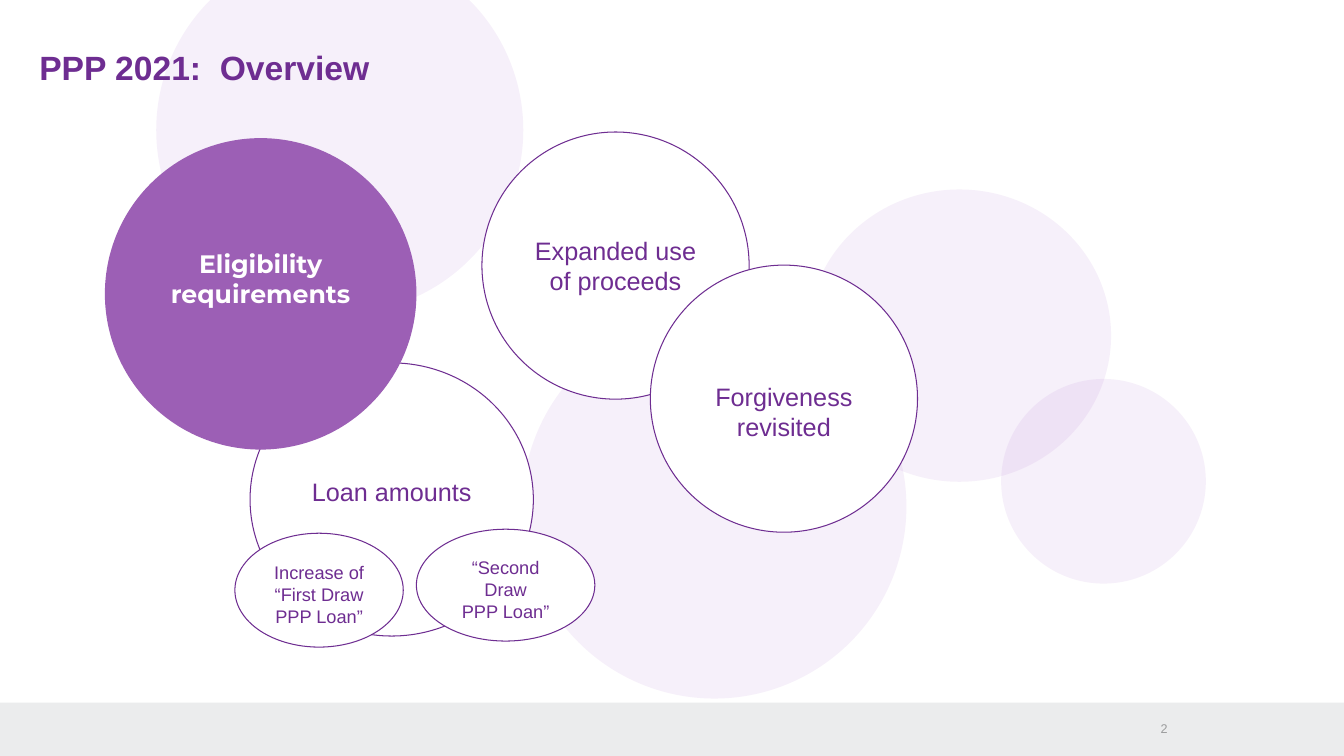
from dataclasses import dataclass

from lxml import etree
from pptx import Presentation
from pptx import util as u
from pptx.dml.color import RGBColor
from pptx.enum import shapes, text
from pptx.oxml import ns


@dataclass(frozen=True)
class Theme:
    """Colours, fonts and type sizes of the slide."""
    purple: str = "6E2D91"
    accent: str = "9C5FB5"
    bubble: str = "AE6CD2"
    white: str = "FFFFFF"
    band: str = "EBECED"
    grey: str = "9A9B9C"
    font: str = "Arial"
    accent_font: str = "Montserrat"
    title_size: float = 24
    label_size: float = 18
    small_size: float = 13
    number_size: float = 9


T = Theme()


def add_filled(s, kind, box, fill, line=None, alpha=None):
    """Add a flat preset shape, optionally outlined or see-through."""
    sp = s.shapes.add_shape(kind, *map(u.Inches, box))
    sp.shadow.inherit = False
    sp.fill.solid()
    sp.fill.fore_color.rgb = RGBColor.from_string(fill)
    if alpha is not None:
        color = sp.fill._xPr.find(".//" + ns.qn("a:srgbClr"))
        etree.SubElement(color, ns.qn("a:alpha"), val=str(alpha * 1000))
    if line:
        sp.line.color.rgb = RGBColor.from_string(line)
        sp.line.width = u.Pt(0.75)
    else:
        sp.line.fill.background()
    return sp


def write(p, words, size, color, bold=False, font=T.font):
    """Add one styled run to a paragraph."""
    r = p.add_run()
    r.text = words
    r.font.name = font
    r.font.size = u.Pt(size)
    r.font.bold = bold
    r.font.color.rgb = RGBColor.from_string(color)


def add_line(s, box, words, size, color, bold=False, align=text.PP_ALIGN.LEFT,
             anchor=text.MSO_ANCHOR.TOP):
    """Add a one-line text box without margins."""
    tf = s.shapes.add_textbox(*map(u.Inches, box)).text_frame
    tf.margin_left = tf.margin_right = tf.margin_top = tf.margin_bottom = 0
    tf.word_wrap = True
    tf.vertical_anchor = anchor
    p = tf.paragraphs[0]
    p.alignment = align
    write(p, words, size, color, bold)


def add_circle(s, box, lines, size=T.label_size, drop=0, accent=False):
    """Add a labelled circle whose text sits a given drop below its centre."""
    sp = add_filled(s, shapes.MSO_SHAPE.OVAL, box,
                    T.accent if accent else T.white,
                    None if accent else T.purple)
    tf = sp.text_frame
    tf.word_wrap = True
    tf.vertical_anchor = text.MSO_ANCHOR.MIDDLE
    tf.margin_top = u.Inches(max(2 * drop, 0))
    tf.margin_bottom = u.Inches(max(-2 * drop, 0))
    p = tf.paragraphs[0]
    p.alignment = text.PP_ALIGN.CENTER
    for i, words in enumerate(lines):
        if i:
            p.add_line_break()
        write(p, words, size, T.white if accent else T.purple, accent,
              T.accent_font if accent else T.font)


def add_backdrop(s, box):
    """Draw the footer band, pale bubbles and page number in the box."""
    x, y, w, h = box
    add_filled(s, shapes.MSO_SHAPE.RECTANGLE, (x, y + h - 0.53, w, 0.53), T.band)
    for dx, dy, bw, bh in ((1.55, -0.53, 3.64, 3.64), (5.18, 3.12, 3.81, 3.81),
                           (8.01, 1.88, 3.01, 2.9), (9.93, 3.76, 2.03, 2.03)):
        add_filled(s, shapes.MSO_SHAPE.OVAL, (x + dx, y + dy, bw, bh),
                   T.bubble, alpha=10)
    add_line(s, (x + 11.42, y + 7.15, 0.16, 0.16), "2", T.number_size, T.grey,
             align=text.PP_ALIGN.RIGHT, anchor=text.MSO_ANCHOR.MIDDLE)


def add_topics(s, box):
    """Draw the topic circles and the two loan draws in the box."""
    x, y = box[:2]
    topics = (
        ((1.44, 2.29, 2.81, 2.71), ["Loan amounts"], T.label_size, -0.08, False),
        ((0, 0.06, 3.09, 3.09), ["Eligibility requirements"],
         T.label_size, -0.15, True),
        ((3.74, 0, 2.65, 2.65), ["Expanded use of proceeds"],
         T.label_size, 0, False),
        ((5.41, 1.32, 2.65, 2.65), ["Forgiveness revisited"],
         T.label_size, 0.13, False),
        ((1.29, 3.98, 1.67, 1.13), ["Increase of “First Draw PPP Loan”"],
         T.small_size, 0.04, False),
        ((3.09, 3.94, 1.77, 1.11), ["“Second Draw", "PPP Loan”"],
         T.small_size, 0.04, False),
    )
    for (dx, dy, w, h), lines, size, drop, accent in topics:
        add_circle(s, (x + dx, y + dy, w, h), lines, size, drop, accent)


def main():
    """Build and save the overview slide."""
    prs = Presentation()
    prs.slide_width, prs.slide_height = u.Inches(13.33), u.Inches(7.5)
    s = prs.slides.add_slide(prs.slide_layouts[6])
    add_backdrop(s, (0, 0, 13.33, 7.5))
    add_line(s, (0.39, 0.47, 9.2, 0.32), "PPP 2021:  Overview",
             T.title_size, T.purple, bold=True)
    add_topics(s, (1.04, 1.31, 8.06, 5.11))
    prs.save("out.pptx")


if __name__ == "__main__":
    main()
